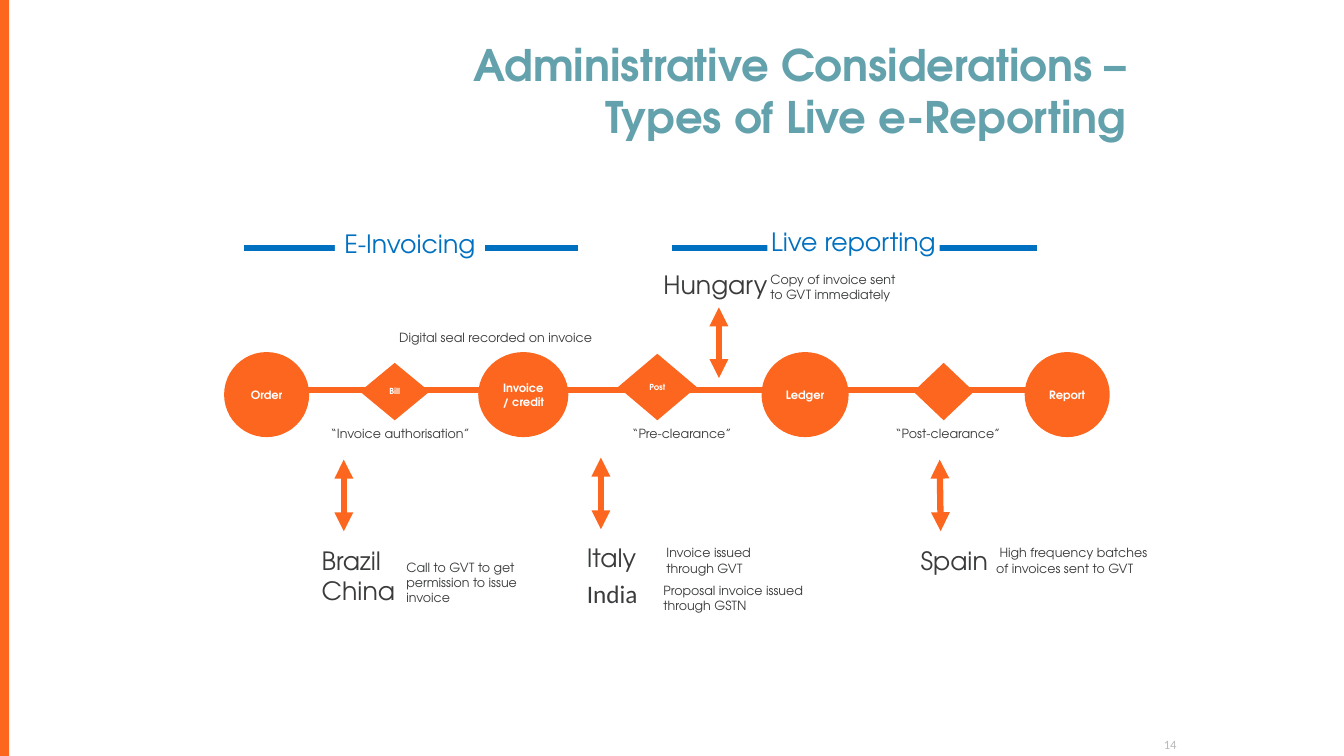
import pptx
import pptx.dml.color
import pptx.enum.shapes
import pptx.enum.text
import pptx.oxml
import pptx.oxml.ns
import pptx.util

Inches, Pt = pptx.util.Inches, pptx.util.Pt
Color = pptx.dml.color.RGBColor
Shape = pptx.enum.shapes.MSO_SHAPE
Align = pptx.enum.text.PP_ALIGN
Anchor = pptx.enum.text.MSO_ANCHOR

ORANGE = Color(0xFC, 0x66, 0x1E)
BLUE = Color(0x00, 0x70, 0xC0)
TEAL = Color(0x63, 0xA1, 0xAC)
DARK = Color(0x3A, 0x3B, 0x3C)
GREY = Color(0xBC, 0xB8, 0xBC)
WHITE = Color(0xFF, 0xFF, 0xFF)
FONT = "TeX Gyre Adventor"
PLAIN = "Calibri"


def write(frame, lines, size, color, font=FONT, bold=False, align=Align.LEFT):
    for i, line in enumerate(lines):
        para = frame.add_paragraph() if i else frame.paragraphs[0]
        para.alignment = align
        run = para.add_run()
        run.text = line
        run.font.size = Pt(size)
        run.font.name = font
        run.font.bold = bold
        run.font.color.rgb = color


def trim(frame):
    """Let the text run free of margins and wrapping."""
    frame.word_wrap = False
    frame.margin_left = frame.margin_right = 0
    frame.margin_top = frame.margin_bottom = 0


def add_text(slide, box, lines, size, color=DARK, font=FONT, align=Align.LEFT):
    frame = slide.shapes.add_textbox(*map(Inches, box)).text_frame
    trim(frame)
    write(frame, lines, size, color, font, align=align)
    return frame


def add_label(slide, left, top, *lines, width=1.32):
    add_text(slide, (left, top, width, 0.28), lines, 9)


def add_land(slide, left, top, *lines, width=0.75, font=FONT):
    add_text(slide, (left, top, width, 0.75), lines, 18, font=font)


def add_form(slide, kind, box, fill):
    form = slide.shapes.add_shape(kind, *map(Inches, box))
    form.shadow.inherit = False
    form.fill.solid()
    form.fill.fore_color.rgb = fill
    form.line.fill.background()
    return form


def add_step(slide, kind, box, text, size):
    step = add_form(slide, kind, box, ORANGE)
    if kind == Shape.OVAL:
        step.line.color.rgb = ORANGE
        step.line.width = Pt(1)
    if text:
        step.text_frame.vertical_anchor = Anchor.MIDDLE
        write(step.text_frame, [text], size, WHITE, bold=True, align=Align.CENTER)


def add_line(slide, start, end, color, heads=False):
    line = slide.shapes.add_connector(
        pptx.enum.shapes.MSO_CONNECTOR.STRAIGHT, *map(Inches, start + end))
    line.line.color.rgb = color
    line.line.width = Pt(4.5)
    if heads:
        for tag in ("a:headEnd", "a:tailEnd"):
            head = pptx.oxml.ns.qn(tag)
            line.line._get_or_add_ln().append(
                line._element.makeelement(head, {"type": "triangle"}))
    props = line._element.spPr
    props.append(props.makeelement(pptx.oxml.ns.qn("a:effectLst"), {}))


def add_phase(slide, start, end, box, text):
    """Draw a blue rule with its heading set into it."""
    add_line(slide, (start, 2.46), (end, 2.46), BLUE)
    frame = add_form(slide, Shape.RECTANGLE, box, WHITE).text_frame
    trim(frame)
    frame.vertical_anchor = Anchor.TOP
    write(frame, [text], 18, BLUE, align=Align.CENTER)


def set_title(slide, lines):
    title = slide.shapes.title
    title.left, title.top = Inches(2.23), Inches(0.71)
    title.width, title.height = Inches(9.04), Inches(0.75)
    frame = title.text_frame
    frame.auto_size = pptx.enum.text.MSO_AUTO_SIZE.NONE
    frame.word_wrap = True
    frame.vertical_anchor = Anchor.BOTTOM
    write(frame, lines, 31, TEAL, bold=True, align=Align.RIGHT)


def main():
    deck = pptx.Presentation()
    deck.slide_width, deck.slide_height = Inches(13.33), Inches(7.5)
    slide = deck.slides.add_slide(deck.slide_layouts[5])
    set_title(slide, ["Administrative Considerations –", "Types of Live e-Reporting"])
    add_form(slide, Shape.RECTANGLE, (0, 0, 0.09, 7.5), ORANGE)

    add_line(slide, (2.96, 3.87), (10.21, 3.87), ORANGE)
    for left, width, text in [(2.23, 0.83, "Order"), (4.75, 0.88, "Invoice/ credit"),
                              (7.56, 0.85, "Ledger"), (10.17, 0.83, "Report")]:
        add_step(slide, Shape.OVAL, (left, 3.5, width, 0.83), text, 8.2)
    for box, text in [((3.57, 3.6, 0.69, 0.57), "Bill"),
                      ((6.13, 3.51, 0.78, 0.66), "Post"),
                      ((9.06, 3.6, 0.6, 0.57), "")]:
        add_step(slide, Shape.DIAMOND, box, text, 6)
    for start, end in [((3.41, 5.27), (3.41, 4.56)), ((5.96, 5.25), (5.96, 4.54)),
                       ((7.13, 3.75), (7.13, 3.05)), ((9.33, 5.27), (9.32, 4.56))]:
        add_line(slide, start, end, ORANGE, heads=True)

    add_phase(slide, 2.42, 5.73, (3.32, 2.27, 1.49, 0.43), "E-Invoicing")
    add_phase(slide, 6.67, 10.29, (7.61, 2.25, 1.71, 0.47), "Live reporting")

    add_land(slide, 3.19, 5.41, "Brazil", "China")
    add_land(slide, 5.82, 5.38, "Italy")
    add_land(slide, 5.82, 5.74, "India", font=PLAIN)
    add_land(slide, 6.58, 2.67, "Hungary", width=1.1)
    add_land(slide, 9.13, 5.41, "Spain")

    add_label(slide, 3.96, 3.27, "Digital seal recorded on invoice", width=2)
    add_label(slide, 3.28, 4.23, "“Invoice authorisation”", width=1.5)
    add_label(slide, 6.27, 4.23, "“Pre-clearance”")
    add_label(slide, 8.88, 4.23, "“Post-clearance”")
    add_label(slide, 4.03, 5.55, "Call to GVT to get", "permission to issue", "invoice")
    add_label(slide, 6.61, 5.41, "Invoice issued", "through GVT")
    add_label(slide, 6.58, 5.78, "Proposal invoice issued", "through GSTN", width=1.5)
    add_label(slide, 7.64, 2.7, "Copy of invoice sent", "to GVT immediately")
    add_label(slide, 9.88, 5.41, " High frequency batches", "of invoices sent to GVT",
              width=1.6)

    page = add_text(slide, (11.17, 7.06, 0.5, 0.4), ["14"], 9, GREY, PLAIN, Align.RIGHT)
    page.vertical_anchor = Anchor.BOTTOM
    deck.save("out.pptx")


if __name__ == "__main__":
    main()
